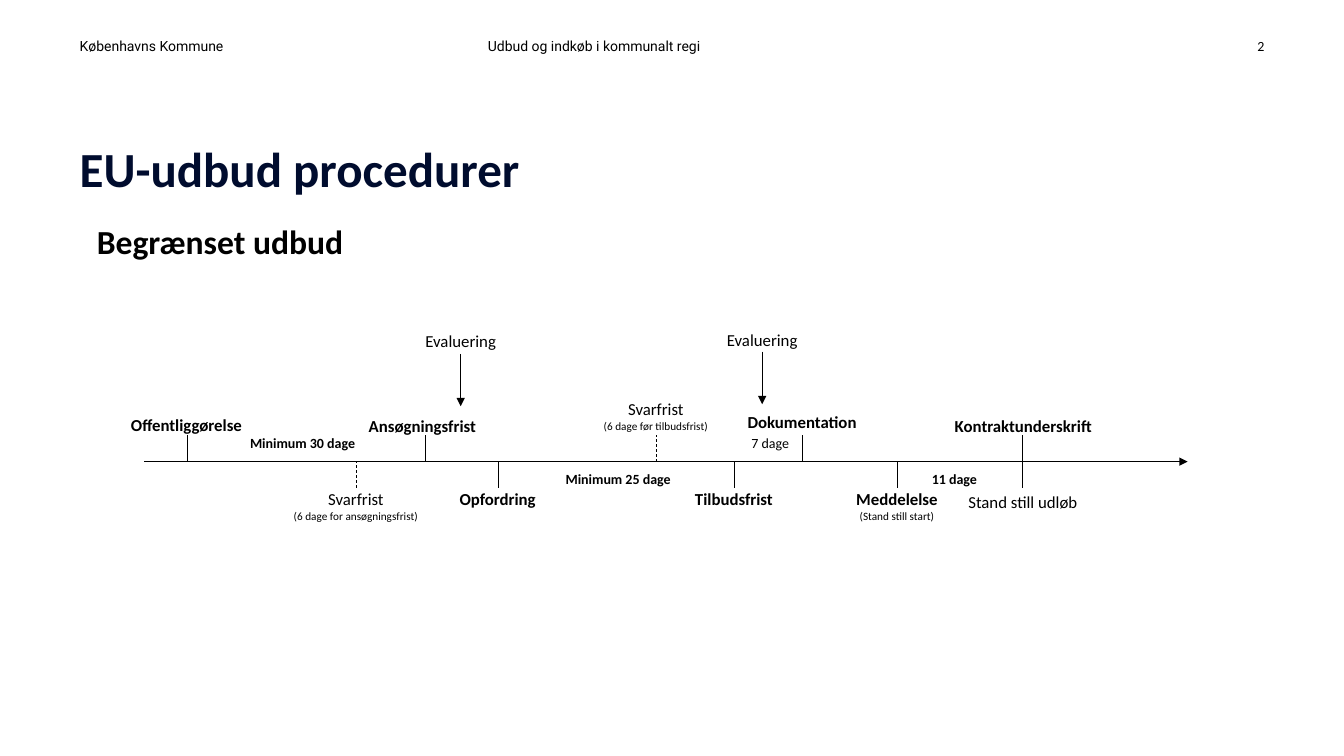
"""Build a slide with the timeline of a restricted EU tender."""
from dataclasses import dataclass
from typing import Any, Optional

from lxml import etree
from pptx import Presentation
from pptx.dml.color import RGBColor
from pptx.enum.dml import MSO_LINE
from pptx.enum.shapes import MSO_CONNECTOR, MSO_SHAPE
from pptx.enum.text import MSO_ANCHOR, MSO_AUTO_SIZE, PP_ALIGN
from pptx.oxml.ns import qn
from pptx.util import Inches, Pt

BLACK = RGBColor(0x00, 0x00, 0x00)
WHITE = RGBColor(0xFF, 0xFF, 0xFF)
NAVY = RGBColor(0x00, 0x0C, 0x2E)
DASH = MSO_LINE.DASH
STRAIGHT = MSO_CONNECTOR.STRAIGHT
RECTANGLE = MSO_SHAPE.RECTANGLE
TOP, BOTTOM = MSO_ANCHOR.TOP, MSO_ANCHOR.BOTTOM
LEFT, CENTER, RIGHT = PP_ALIGN.LEFT, PP_ALIGN.CENTER, PP_ALIGN.RIGHT
FIT_SHAPE, NO_FIT = MSO_AUTO_SIZE.SHAPE_TO_FIT_TEXT, MSO_AUTO_SIZE.NONE

WIDTH, HEIGHT = Inches(13.33), Inches(7.5)
LINE_HEIGHT = 1.22
AXIS, TICK = 61.07, 3.47
HEADER_TOP, HEADER_HEIGHT = 4.53, 2.67
ABOVE, BELOW = 54.8, 64.67
SPAN_ABOVE, SPAN_BELOW = 57.47, 62.27


@dataclass(frozen=True)
class Line:
    """One line of text with its format."""
    text: str
    size: int = 12
    bold: bool = False
    font: str = "Calibri"
    color: RGBColor = BLACK


@dataclass(frozen=True)
class Header:
    """A text in the header row, placed in percent of the slide width."""
    left: float
    width: float
    line: Line
    alignment: Any = LEFT


@dataclass(frozen=True)
class Label:
    """A text on the timeline, placed in percent of the slide."""
    centre: float
    top: float
    width: float
    lines: tuple[Line, ...]
    alignment: Any = CENTER
    fill: Optional[RGBColor] = None
    outline: Optional[RGBColor] = None


@dataclass(frozen=True)
class Stroke:
    """A straight line between two points in percent of the slide."""
    x1: float
    y1: float
    x2: float
    y2: float
    arrow: bool = False
    dashed: bool = False


def tick(x: float, up: bool, dashed: bool = False) -> Stroke:
    """Return a tick that stands on or hangs from the axis."""
    bottom = AXIS if up else AXIS + TICK
    return Stroke(x, bottom, x, bottom - TICK, dashed=dashed)


HEADERS = (
    Header(5.93, 28.88, Line("Københavns Kommune", 10, font="Roboto")),
    Header(36.31, 33.61, Line("Udbud og indkøb i kommunalt regi", 10, font="Roboto")),
    Header(90.85, 3.23, Line("2", 10), RIGHT),
)
STROKES = (
    Stroke(10.73, AXIS, 88.37, AXIS, arrow=True),
    Stroke(34.28, 46.8, 34.28, 53.73, arrow=True),
    Stroke(56.71, 46.53, 56.71, 53.47, arrow=True),
    *(tick(x, True) for x in (13.95, 31.66, 59.71, 76.07)),
    *(tick(x, False) for x in (37.06, 54.61, 66.77, 76.07)),
    tick(48.84, True, dashed=True),
    tick(26.48, False, dashed=True),
)
LABELS = (
    Label(18.27, 29.2, 22.13, (Line("Begrænset udbud", 24, True),), LEFT, fill=WHITE),
    Label(34.28, 43.73, 6.6, (Line("Evaluering"),)),
    Label(56.71, 43.6, 6.6, (Line("Evaluering"),)),
    Label(13.88, ABOVE, 9.9, (Line("Offentliggørelse", bold=True),)),
    Label(31.43, 54.93, 9.75, (Line("Ansøgningsfrist", bold=True),)),
    Label(48.8, 52.8, 9.83, (Line("Svarfrist"), Line("(6 dage før tilbudsfrist)", 8))),
    Label(59.68, 54.53, 9.68, (Line("Dokumentation", bold=True),)),
    Label(76.14, 54.93, 12.3, (Line("Kontraktunderskrift", bold=True),)),
    Label(26.48, BELOW, 11.55,
          (Line("Svarfrist"), Line("(6 dage for ansøgningsfrist)", 8))),
    Label(37.03, BELOW, 6.98, (Line("Opfordring", bold=True),)),
    Label(54.61, BELOW, 7.05, (Line("Tilbudsfrist", bold=True),)),
    Label(66.74, BELOW, 7.13,
          (Line("Meddelelse", bold=True), Line("(Stand still start)", 8))),
    Label(76.11, 65.07, 10.13, (Line("Stand still udløb"),)),
    Label(22.51, SPAN_ABOVE, 9.3, (Line("Minimum 30 dage", 10, True),)),
    Label(45.99, SPAN_BELOW, 9.3, (Line("Minimum 25 dage", 10, True),)),
    Label(57.31, SPAN_ABOVE, 3.45, (Line("7 dage", 10),), outline=WHITE),
    Label(71.01, SPAN_BELOW, 3.68, (Line("11 dage", 10, True),), outline=WHITE),
)


def across(share: float) -> int:
    """Turn a percentage of the slide width into a length."""
    return int(WIDTH * share / 100)


def down(share: float) -> int:
    """Turn a percentage of the slide height into a length."""
    return int(HEIGHT * share / 100)


def set_attributes(target: Any, values: dict[str, Any]) -> None:
    """Set each named attribute on the target."""
    for name, value in values.items():
        setattr(target, name, value)


def write_lines(shape: Any, lines: tuple[Line, ...], alignment: Any, anchor: Any,
                wrap: bool, auto_size: Any) -> None:
    """Fill a shape with formatted paragraphs and no margins."""
    frame = shape.text_frame
    set_attributes(frame, {
        "margin_left": 0, "margin_right": 0, "margin_top": 0, "margin_bottom": 0,
        "vertical_anchor": anchor, "word_wrap": wrap, "auto_size": auto_size,
    })
    frame.text = "\n".join(line.text for line in lines)
    for paragraph, line in zip(frame.paragraphs, lines):
        paragraph.alignment = alignment
        font = paragraph.runs[0].font
        set_attributes(font, {"name": line.font, "size": Pt(line.size), "bold": line.bold})
        font.color.rgb = line.color


def draw_title(slide: Any) -> None:
    """Place and format the title placeholder."""
    title = slide.shapes.title
    set_attributes(title, {"left": across(5.93), "top": down(13.07),
                           "width": across(88.22), "height": down(13.07)})
    line = Line("EU-udbud procedurer", 35, True, color=NAVY)
    write_lines(title, (line,), LEFT, BOTTOM, True, NO_FIT)
    title.text_frame.paragraphs[0].line_spacing = 0.83


def draw_header(slide: Any, header: Header) -> None:
    """Draw one text of the header row."""
    box = slide.shapes.add_textbox(across(header.left), down(HEADER_TOP),
                                   across(header.width), down(HEADER_HEIGHT))
    write_lines(box, (header.line,), header.alignment, BOTTOM, True, NO_FIT)


def draw_stroke(slide: Any, stroke: Stroke) -> None:
    """Draw a thin line, dashed or with an arrowhead when asked."""
    connector = slide.shapes.add_connector(STRAIGHT, across(stroke.x1), down(stroke.y1),
                                           across(stroke.x2), down(stroke.y2))
    connector.line.width = Pt(0.5)
    connector.line.color.rgb = BLACK
    if stroke.dashed:
        connector.line.dash_style = DASH
    if stroke.arrow:
        etree.SubElement(connector.line._get_or_add_ln(), qn("a:tailEnd"), type="triangle")
    etree.SubElement(connector._element.spPr, qn("a:effectLst"))


def draw_label(slide: Any, label: Label) -> None:
    """Draw a text box, or a rectangle when the label has a fill or outline."""
    height = Pt(sum(line.size for line in label.lines) * LINE_HEIGHT)
    place = (across(label.centre - label.width / 2), down(label.top),
             across(label.width), height)
    if label.fill is None and label.outline is None:
        shape = slide.shapes.add_textbox(*place)
    else:
        shape = slide.shapes.add_shape(RECTANGLE, *place)
        shape.shadow.inherit = False
        for form, color in ((shape.fill, label.fill), (shape.line.fill, label.outline)):
            if color is None:
                form.background()
            else:
                form.solid()
                form.fore_color.rgb = color
        if label.outline is not None:
            shape.line.width = Pt(0.75)
    write_lines(shape, label.lines, label.alignment, TOP, False, FIT_SHAPE)


def main() -> None:
    """Build and save the presentation."""
    presentation = Presentation()
    set_attributes(presentation, {"slide_width": WIDTH, "slide_height": HEIGHT})
    slide = presentation.slides.add_slide(presentation.slide_layouts[5])
    draw_title(slide)
    for draw, items in ((draw_header, HEADERS), (draw_stroke, STROKES), (draw_label, LABELS)):
        for item in items:
            draw(slide, item)
    presentation.save("out.pptx")


if __name__ == "__main__":
    main()
